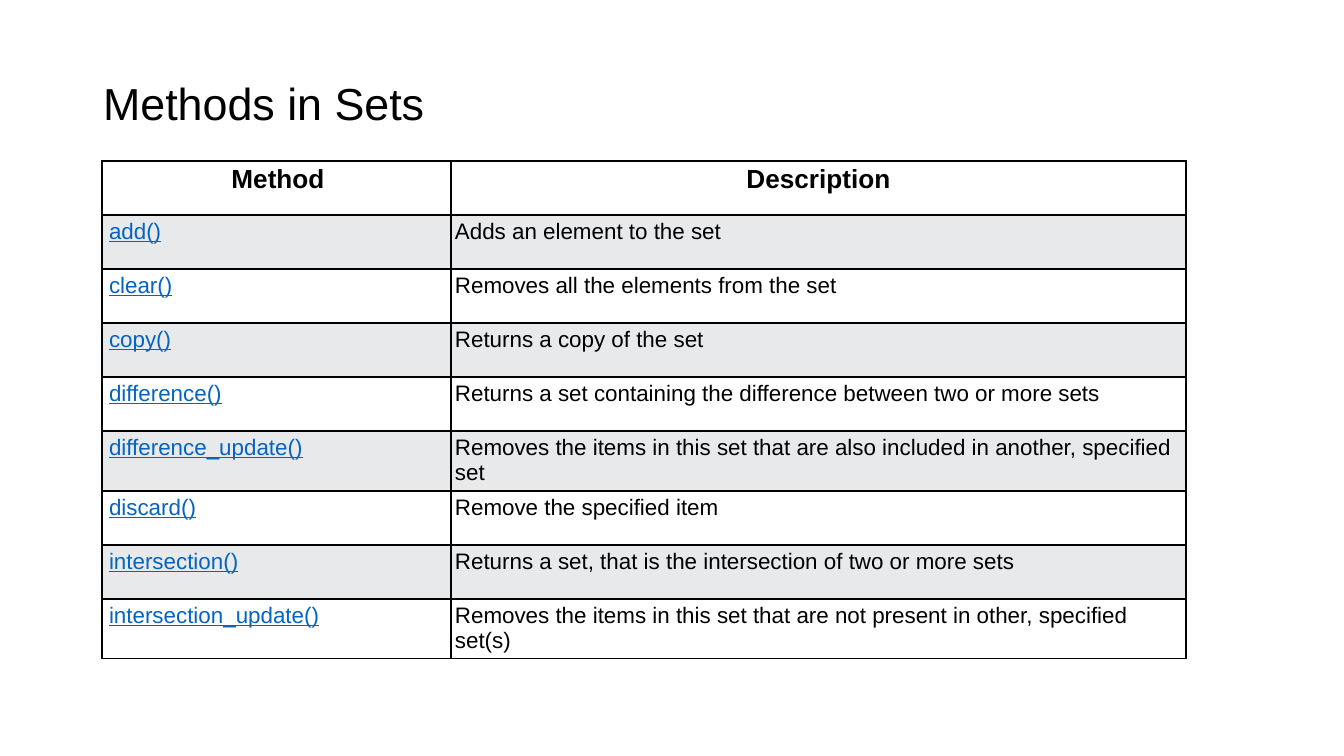
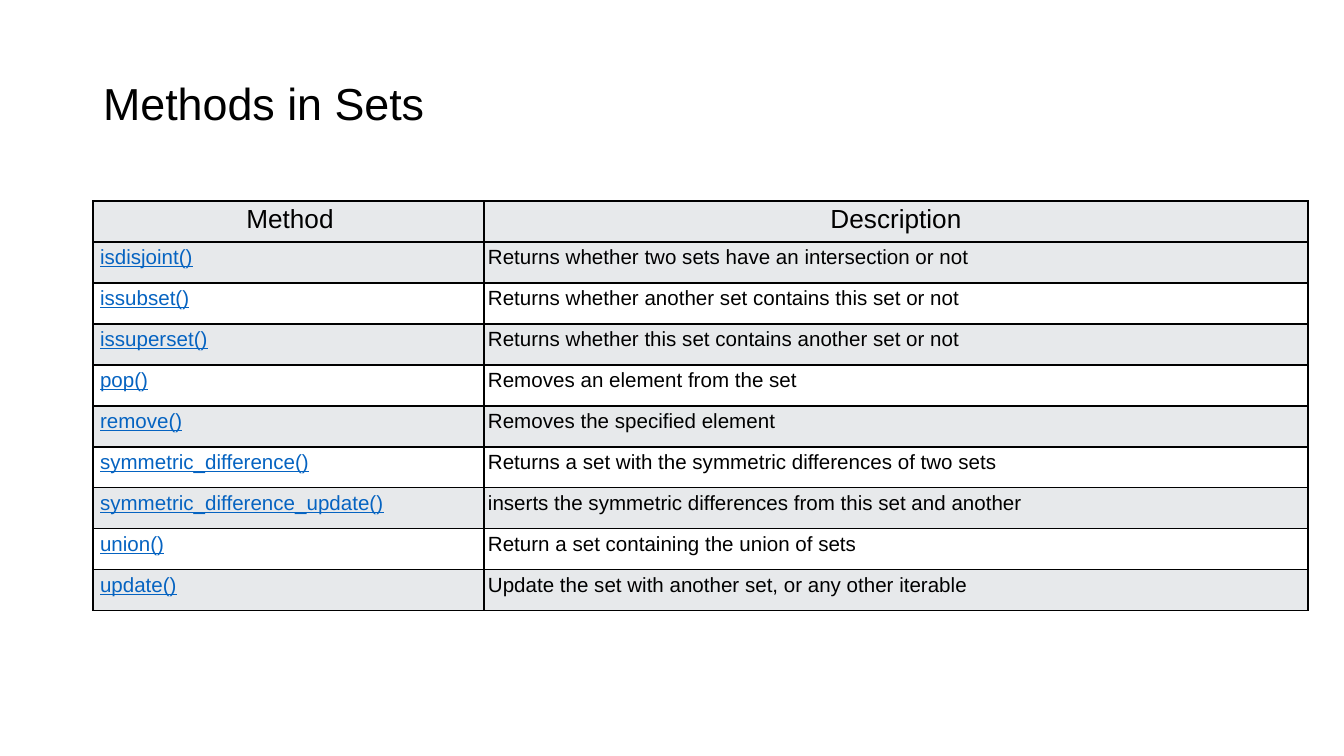
from lxml import etree
from pptx import Presentation
from pptx import util as u
from pptx.dml import color
from pptx.enum import text
from pptx.oxml import ns

PX = 914400 / 134.4
FONT = "Arial"
BLACK, WHITE, BAND, LINK = "000000", "FFFFFF", "E7E9EB", "0563C1"
TITLE_ONLY = 5


def px(length):
    return u.Emu(round(length * PX))


def rgb(value):
    return color.RGBColor.from_string(value)


def set_margins(item, left, top, right, bottom):
    item.margin_left, item.margin_top = px(left), px(top)
    item.margin_right, item.margin_bottom = px(right), px(bottom)


def add_borders(cell):
    """Draw a 1 pt black line on every side; call before filling the cell."""
    properties = cell._tc.get_or_add_tcPr()
    for side in ("lnL", "lnR", "lnT", "lnB"):
        line = etree.SubElement(properties, ns.qn(f"a:{side}"), w=str(u.Pt(1)))
        fill = etree.SubElement(line, ns.qn("a:solidFill"))
        etree.SubElement(fill, ns.qn("a:srgbClr"), val=BLACK)


class SlideWriter:
    def __init__(self):
        self.deck = Presentation()
        self.deck.slide_width, self.deck.slide_height = px(1344), px(756)
        self.page = None

    def add_page(self, title):
        self.page = self.deck.slides.add_slide(self.deck.slide_layouts[TITLE_ONLY])
        self.page.background.fill.solid()
        self.page.background.fill.fore_color.rgb = rgb(WHITE)
        self.title(title)

    def style(self, para, size, ink=BLACK, bold=False, underline=False):
        for span in para.runs:
            font = span.font
            font.name, font.size = FONT, u.Pt(size)
            font.color.rgb = rgb(ink)
            font.bold, font.underline = bold, underline

    def title(self, words):
        box = self.page.shapes.title
        box.left, box.top, box.width, box.height = map(px, (93, 32, 1159, 103))
        frame = box.text_frame
        frame.text = words
        frame.word_wrap = True
        frame.auto_size = text.MSO_AUTO_SIZE.NONE
        frame.vertical_anchor = text.MSO_ANCHOR.BOTTOM
        set_margins(frame, 10, 5, 10, 5)
        para = frame.paragraphs[0]
        para.alignment = text.PP_ALIGN.LEFT
        para.line_spacing = 0.9
        self.style(para, 24)

    def cell(self, cell, words, fill, left_margin):
        """Fill a cell and return its paragraph for styling."""
        add_borders(cell)
        cell.fill.solid()
        cell.fill.fore_color.rgb = rgb(fill)
        set_margins(cell, left_margin, 4, 4, 4)
        cell.vertical_anchor = text.MSO_ANCHOR.TOP
        cell.text_frame.text = words
        return cell.text_frame.paragraphs[0]

    def method_table(self, methods, left, top, widths, row_height, size,
                     header_fill, header_bold, tall_rows=()):
        rows = [("Method", "Description"), *methods]
        heights = [60 if row in tall_rows else row_height for row in range(len(rows))]
        table = self.page.shapes.add_table(
            len(rows), len(widths), px(left), px(top),
            px(sum(widths)), px(sum(heights))).table
        table.first_row = table.horz_banding = False
        for column, width in zip(table.columns, widths):
            column.width = px(width)
        for index, (row, height) in enumerate(zip(table.rows, heights)):
            row.height = px(height)
            fill = BAND if index % 2 else WHITE
            for column, words in enumerate(rows[index]):
                is_method = column == 0
                para = self.cell(row.cells[column], words,
                                 fill if index else header_fill,
                                 7 if is_method else 4)
                if index == 0:
                    para.alignment = text.PP_ALIGN.CENTER
                    self.style(para, 14, bold=header_bold)
                else:
                    self.style(para, size, LINK if is_method else BLACK,
                               underline=is_method)


def main():
    writer = SlideWriter()

    writer.add_page("Methods in Sets")
    writer.method_table([
        ("add()", "Adds an element to the set"),
        ("clear()", "Removes all the elements from the set"),
        ("copy()", "Returns a copy of the set"),
        ("difference()", "Returns a set containing the difference between two or more sets"),
        ("difference_update()",
         "Removes the items in this set that are also included in another, specified set"),
        ("discard()", "Remove the specified item"),
        ("intersection()", "Returns a set, that is the intersection of two or more sets"),
        ("intersection_update()",
         "Removes the items in this set that are not present in other, specified set(s)"),
    ], left=102, top=161, widths=(349, 735), row_height=54, size=12,
        header_fill=WHITE, header_bold=True, tall_rows=(5, 8))

    writer.add_page("Methods in Sets")
    writer.method_table([
        ("isdisjoint()", "Returns whether two sets have an intersection or not"),
        ("issubset()", "Returns whether another set contains this set or not"),
        ("issuperset()", "Returns whether this set contains another set or not"),
        ("pop()", "Removes an element from the set"),
        ("remove()", "Removes the specified element"),
        ("symmetric_difference()", "Returns a set with the symmetric differences of two sets"),
        ("symmetric_difference_update()",
         "inserts the symmetric differences from this set and another"),
        ("union()", "Return a set containing the union of sets"),
        ("update()", "Update the set with another set, or any other iterable"),
    ], left=93, top=201, widths=(391, 824), row_height=41, size=11,
        header_fill=BAND, header_bold=False)

    writer.deck.save("out.pptx")


if __name__ == "__main__":
    main()
